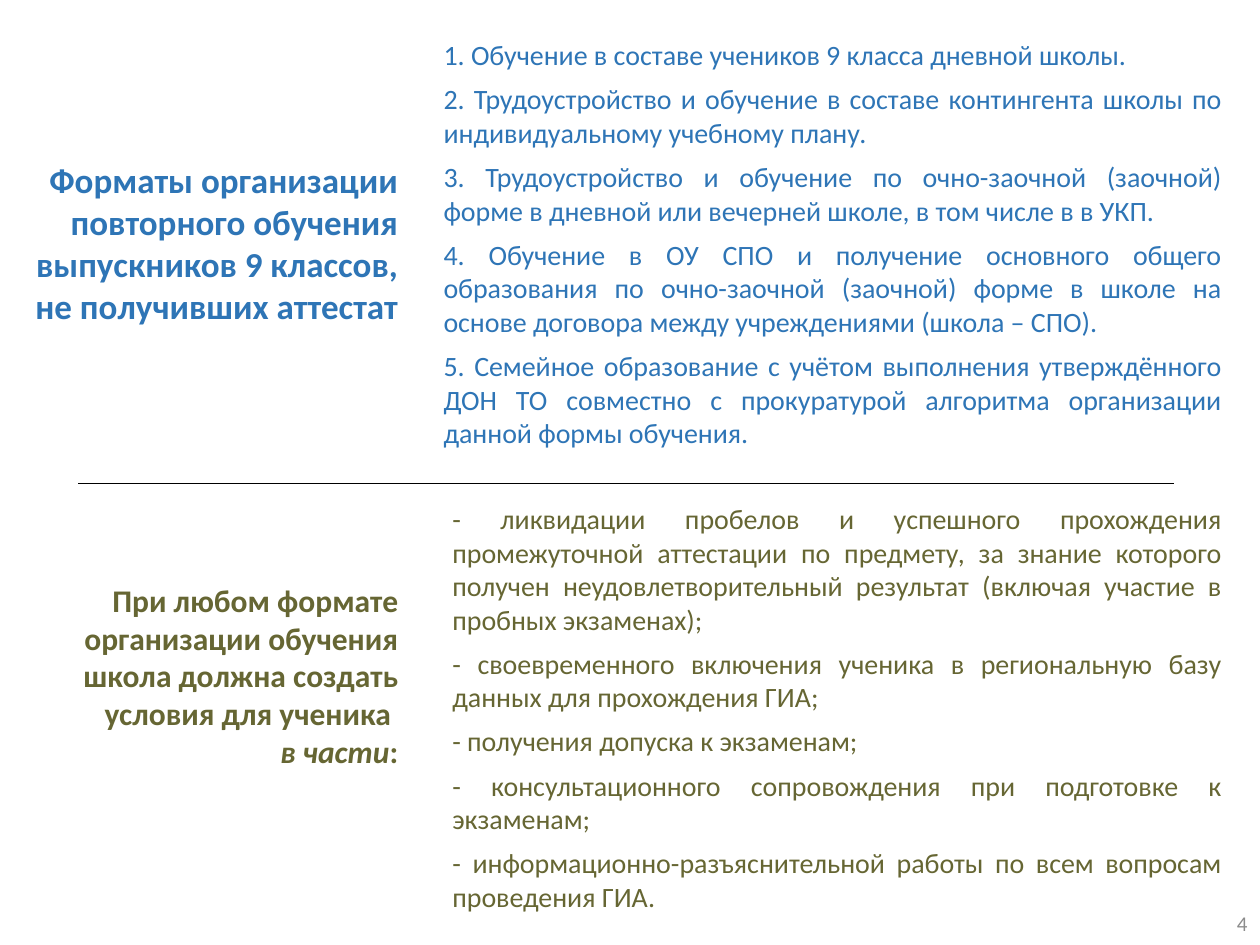
from pptx import Presentation
from pptx.dml.color import RGBColor
from pptx.enum import shapes, text
from pptx.oxml import parse_xml
from pptx.oxml.ns import nsdecls
from pptx.util import Inches, Pt

COLORS = {"blue": "2E75B6", "olive": "666633", "white": "FFFFFF",
          "black": "000000", "gray": "8C8C8C"}
FONT = "Calibri"

# Content: each paragraph is a list of (text, italic) runs
formats_heading = [[("Форматы организации повторного обучения выпускников 9 классов, "
                     "не получивших аттестат", False)]]
formats = [
    "1. Обучение в составе учеников 9 класса дневной школы.",
    "2. Трудоустройство и обучение в составе контингента школы по индивидуальному учебному плану.",
    "3. Трудоустройство и обучение по очно-заочной (заочной) форме в дневной или вечерней школе, "
    "в том числе в в УКП.",
    "4. Обучение в ОУ СПО и получение основного общего образования по очно-заочной (заочной) форме "
    "в школе на основе договора между учреждениями (школа – СПО).",
    "5. Семейное образование с учётом выполнения утверждённого ДОН ТО совместно с прокуратурой "
    "алгоритма организации данной формы обучения.",
]
conditions_heading = [
    [("При любом формате организации обучения школа должна создать условия для ученика ", False)],
    [("в части", True), (":", False)],
]
conditions = [
    "- ликвидации пробелов и успешного прохождения промежуточной аттестации по предмету, за знание "
    "которого получен неудовлетворительный результат (включая участие в пробных экзаменах);",
    "- своевременного включения ученика в региональную базу данных для прохождения ГИА;",
    "- получения допуска к экзаменам;",
    "- консультационного сопровождения при подготовке к экзаменам;",
    "- информационно-разъяснительной работы по всем вопросам проведения ГИА. ",
]
slide_number = "4"

# Formats
HEADING = {"alignment": text.PP_ALIGN.RIGHT, "space_before": Pt(0), "space_after": Pt(0)}
LIST = {"alignment": text.PP_ALIGN.JUSTIFY, "space_before": Pt(0), "space_after": Pt(6)}
FRAME = {"word_wrap": True, "auto_size": text.MSO_AUTO_SIZE.NONE,
         "vertical_anchor": text.MSO_ANCHOR.TOP}


def color(name):
    return RGBColor.from_string(COLORS[name])


def set_values(target, values):
    for name, value in values.items():
        setattr(target, name, value)


def place(shape, left, top, width, height):
    set_values(shape, {"left": Inches(left), "top": Inches(top),
                       "width": Inches(width), "height": Inches(height)})


def write(shape, paragraphs, paragraph_format, size, color_name, bold=False):
    frame = shape.text_frame
    set_values(frame, FRAME)
    for index, runs in enumerate(paragraphs):
        paragraph = frame.add_paragraph() if index else frame.paragraphs[0]
        set_values(paragraph, paragraph_format)
        for words, italic in runs:
            run = paragraph.add_run()
            run.text = words
            set_values(run.font, {"name": FONT, "size": Pt(size), "bold": bold, "italic": italic})
            run.font.color.rgb = color(color_name)


def write_list(shape, items, color_name):
    write(shape, [[(item, False)] for item in items], LIST, 16, color_name)
    for paragraph in shape.text_frame.paragraphs:
        properties = paragraph._p.get_or_add_pPr()
        properties.set("marL", "0")
        properties.set("indent", "0")
        properties.append(parse_xml(f"<a:buNone {nsdecls('a')}/>"))


def fill_white(shape):
    shape.fill.solid()
    shape.fill.fore_color.rgb = color("white")


presentation = Presentation()
presentation.slide_width, presentation.slide_height = Inches(10), Inches(7.5)
slide = presentation.slides.add_slide(presentation.slide_layouts[3])
title, formats_body, conditions_body = slide.placeholders

# Upper half: formats of repeated study
place(formats_body, 3.42, 0.25, 6.38, 3.4)
write_list(formats_body, formats, "blue")
place(title, 0, 1.21, 3.26, 1.45)
fill_white(title)
write(title, formats_heading, HEADING, 20, "blue", bold=True)

# Lower half: conditions the school provides
conditions_title = slide.shapes.add_textbox(0, 0, 0, 0)
place(conditions_title, -0.08, 4.56, 3.34, 1.62)
fill_white(conditions_title)
write(conditions_title, conditions_heading, HEADING, 18, "olive", bold=True)
place(conditions_body, 3.49, 3.93, 6.31, 3.4)
write_list(conditions_body, conditions, "olive")

# Divider between the halves
divider = slide.shapes.add_connector(shapes.MSO_CONNECTOR.STRAIGHT, Inches(0.62), Inches(3.84),
                                     Inches(9.32), Inches(3.84))
divider.line.color.rgb = color("black")
divider.line.width = Pt(0.5)
divider._element.spPr.append(parse_xml(f"<a:effectLst {nsdecls('a')}/>"))

# Slide number
number = slide.shapes.add_textbox(0, 0, 0, 0)
place(number, 7.75, 7.13, 2.25, 0.4)
write(number, [[(slide_number, False)]], HEADING, 12, "gray")
number.text_frame.vertical_anchor = text.MSO_ANCHOR.MIDDLE

presentation.save("out.pptx")
